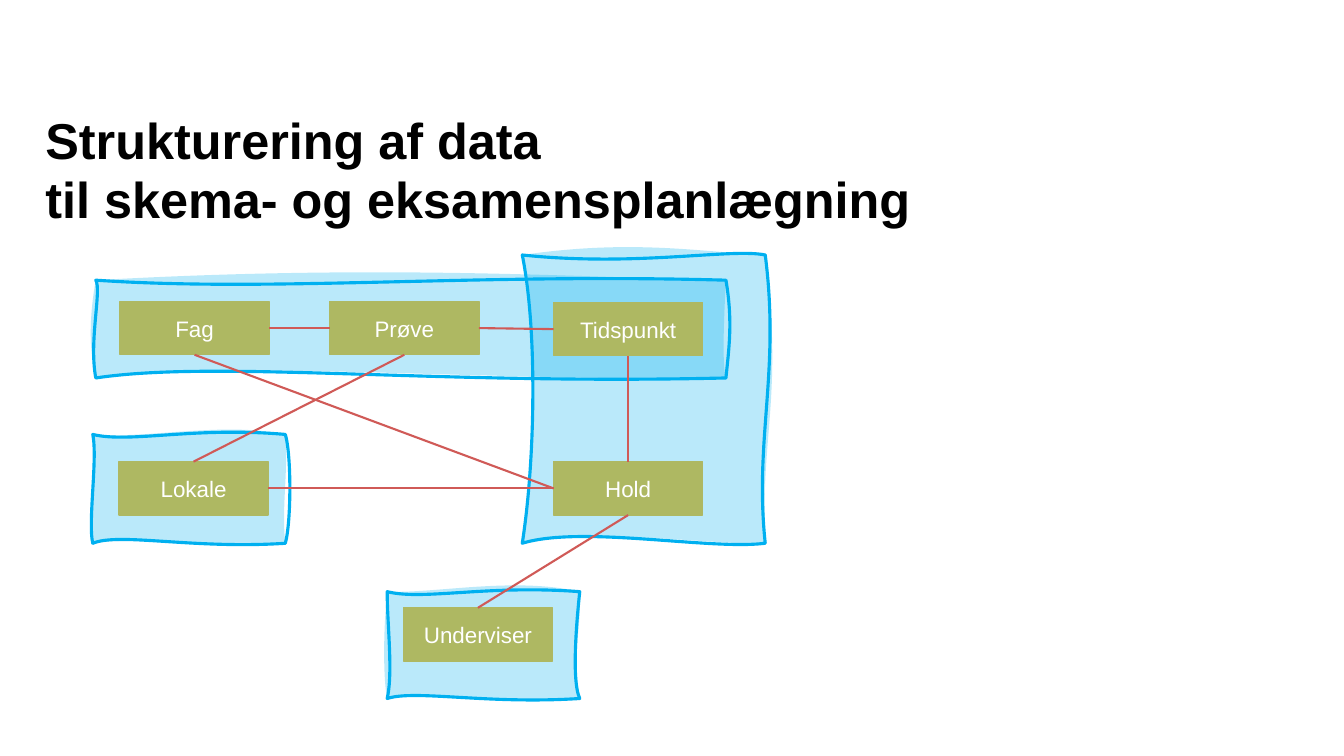
from lxml import etree
from pptx import Presentation
from pptx import util as u
from pptx.dml.color import RGBColor
from pptx.enum import shapes, text
from pptx.oxml import ns

# Content: all lengths are px, 100 to the inch
TITLE = "Strukturering af data\vtil skema- og eksamensplanlægning"
TITLE_BOX = (45, 112, 1199, 73)
ENTITY_SIZE = (148, 53)
ENTITIES = {
    "Hold": (549, 458),
    "Prøve": (327, 299),
    "Lokale": (118, 458),
    "Fag": (119, 299),
    "Underviser": (400, 603),
    "Tidspunkt": (549, 300),
}
TOP, LEFT, BOTTOM, RIGHT = range(4)
RELATIONS = [
    ("Prøve", BOTTOM, "Lokale", TOP),
    ("Prøve", RIGHT, "Tidspunkt", LEFT),
    ("Fag", RIGHT, "Prøve", LEFT),
    ("Fag", BOTTOM, "Hold", LEFT),
    ("Hold", LEFT, "Lokale", RIGHT),
    ("Hold", BOTTOM, "Underviser", TOP),
    ("Hold", TOP, "Tidspunkt", BOTTOM),
]
# Each group: corner box (left, top, right, bottom), then the two Bezier
# handles of the top, right, bottom and left edges of its outline and its fill
GROUPS = [
    ((384, 587, 575, 693),
     [(420, 596, 482, 580), (573, 606, 566, 674), (483, 699, 412, 684), (390, 667, 384, 620)],
     [(432, 589, 509, 572), (577, 622, 567, 647), (492, 697, 426, 686), (381, 681, 379, 637)]),
    ((518, 253, 759, 539),
     [(631, 265, 725, 246), (774, 369, 748, 436), (704, 546, 577, 521), (531, 456, 533, 327)],
     [(627, 237, 694, 250), (777, 395, 754, 431), (721, 542, 577, 522), (532, 445, 532, 286)]),
    ((95, 278, 720, 375),
     [(271, 290, 471, 271), (727, 319, 723, 345), (428, 382, 215, 357), (88, 338, 101, 288)],
     [(381, 262, 565, 275), (718, 314, 716, 363), (456, 378, 246, 357), (86, 338, 91, 300)]),
    ((92, 431, 283, 539),
     [(129, 440, 192, 423), (289, 451, 289, 517), (191, 545, 118, 528), (87, 518, 97, 455)],
     [(143, 436, 219, 418), (286, 470, 279, 504), (199, 543, 132, 532), (87, 489, 98, 461)]),
]


class Theme:
    scale = 9144
    font = "Arial"
    title = {"size": u.Pt(36), "bold": True}
    label = {"size": u.Pt(16), "bold": False}
    black = RGBColor.from_string("000000")
    white = RGBColor.from_string("FFFFFF")
    group = RGBColor.from_string("00B0F0")
    entity = RGBColor.from_string("AEB862")
    relation = RGBColor.from_string("D05A57")
    group_alpha = 27000
    group_line, entity_line, relation_line = u.Pt(2.25), u.Pt(1), u.Pt(1.5)


def px(*lengths):
    return [length * Theme.scale for length in lengths]


def set_all(target, values):
    for name, value in values.items():
        setattr(target, name, value)


def set_line(shape, color, width):
    shape.line.color.rgb = color
    shape.line.width = width


def format_text(frame, inset, anchor, alignment, font, color):
    margins = {f"margin_{side}": u.Emu(inset * Theme.scale)
               for side in ("left", "top", "right", "bottom")}
    set_all(frame, {**margins, "word_wrap": True, "vertical_anchor": anchor,
                    "auto_size": text.MSO_AUTO_SIZE.NONE})
    paragraph = frame.paragraphs[0]
    paragraph.alignment = alignment
    set_all(paragraph.font, {"name": Theme.font, **font})
    paragraph.font.color.rgb = color
    return paragraph


def add_curved_path(path_list, box, edges, hidden):
    left, top, right, bottom = box
    path = etree.SubElement(path_list, ns.qn("a:path"),
                            w=str(right - left), h=str(bottom - top), **hidden)

    def add_step(tag, points):
        step = etree.SubElement(path, ns.qn(tag))
        for x, y in points:
            etree.SubElement(step, ns.qn("a:pt"), x=str(x - left), y=str(y - top))

    add_step("a:moveTo", [(left, top)])
    corners = [(right, top), (right, bottom), (left, bottom), (left, top)]
    for (x1, y1, x2, y2), corner in zip(edges, corners):
        add_step("a:cubicBezTo", [(x1, y1), (x2, y2), corner])
    add_step("a:close", [])


def add_group(slide, box, outline, fill):
    left, top, right, bottom = box
    builder = slide.shapes.build_freeform(left, top, scale=Theme.scale)
    builder.add_line_segments([(right, top), (right, bottom), (left, bottom)], close=True)
    shape = builder.convert_to_shape()
    shape.shadow.inherit = False
    shape.fill.solid()
    shape.fill.fore_color.rgb = Theme.group
    set_line(shape, Theme.group, Theme.group_line)
    color = shape.element.spPr.find(ns.qn("a:solidFill"))[0]
    etree.SubElement(color, ns.qn("a:alpha"), val=str(Theme.group_alpha))
    # Swap the straight sides for curved ones
    path_list = next(shape.element.iter(ns.qn("a:pathLst")))
    for path in list(path_list):
        path_list.remove(path)
    add_curved_path(path_list, box, outline, {"fill": "none"})
    add_curved_path(path_list, box, fill, {"stroke": "0"})


def add_entity(slide, name, position):
    shape = slide.shapes.add_shape(shapes.MSO_SHAPE.RECTANGLE, *px(*position, *ENTITY_SIZE))
    shape.shadow.inherit = False
    shape.fill.solid()
    shape.fill.fore_color.rgb = Theme.entity
    set_line(shape, Theme.entity, Theme.entity_line)
    shape.text_frame.text = name
    format_text(shape.text_frame, 8, text.MSO_ANCHOR.MIDDLE, text.PP_ALIGN.CENTER,
                Theme.label, Theme.white)
    return shape


def add_relation(slide, start, start_side, end, end_side):
    connector = slide.shapes.add_connector(shapes.MSO_CONNECTOR.STRAIGHT, 0, 0, 0, 0)
    connector.begin_connect(start, start_side)
    connector.end_connect(end, end_side)
    set_line(connector, Theme.relation, Theme.relation_line)
    etree.SubElement(connector.element.spPr, ns.qn("a:effectLst"))


def main():
    presentation = Presentation()
    set_all(presentation, {"slide_width": u.Inches(13.33), "slide_height": u.Inches(7.5)})
    slide = presentation.slides.add_slide(presentation.slide_layouts[5])

    # Title
    title = slide.shapes.title
    set_all(title, dict(zip(("left", "top", "width", "height"), px(*TITLE_BOX))))
    title.text_frame.text = TITLE
    paragraph = format_text(title.text_frame, 0, text.MSO_ANCHOR.TOP, text.PP_ALIGN.LEFT,
                            Theme.title, Theme.black)
    set_all(paragraph, {"line_spacing": 0.97, "space_before": u.Pt(0)})

    # Diagram: groups behind, then entities, then their relations
    for box, outline, fill in GROUPS:
        add_group(slide, box, outline, fill)
    entities = {name: add_entity(slide, name, position)
                for name, position in ENTITIES.items()}
    for start, start_side, end, end_side in RELATIONS:
        add_relation(slide, entities[start], start_side, entities[end], end_side)

    presentation.save("out.pptx")


if __name__ == "__main__":
    main()
